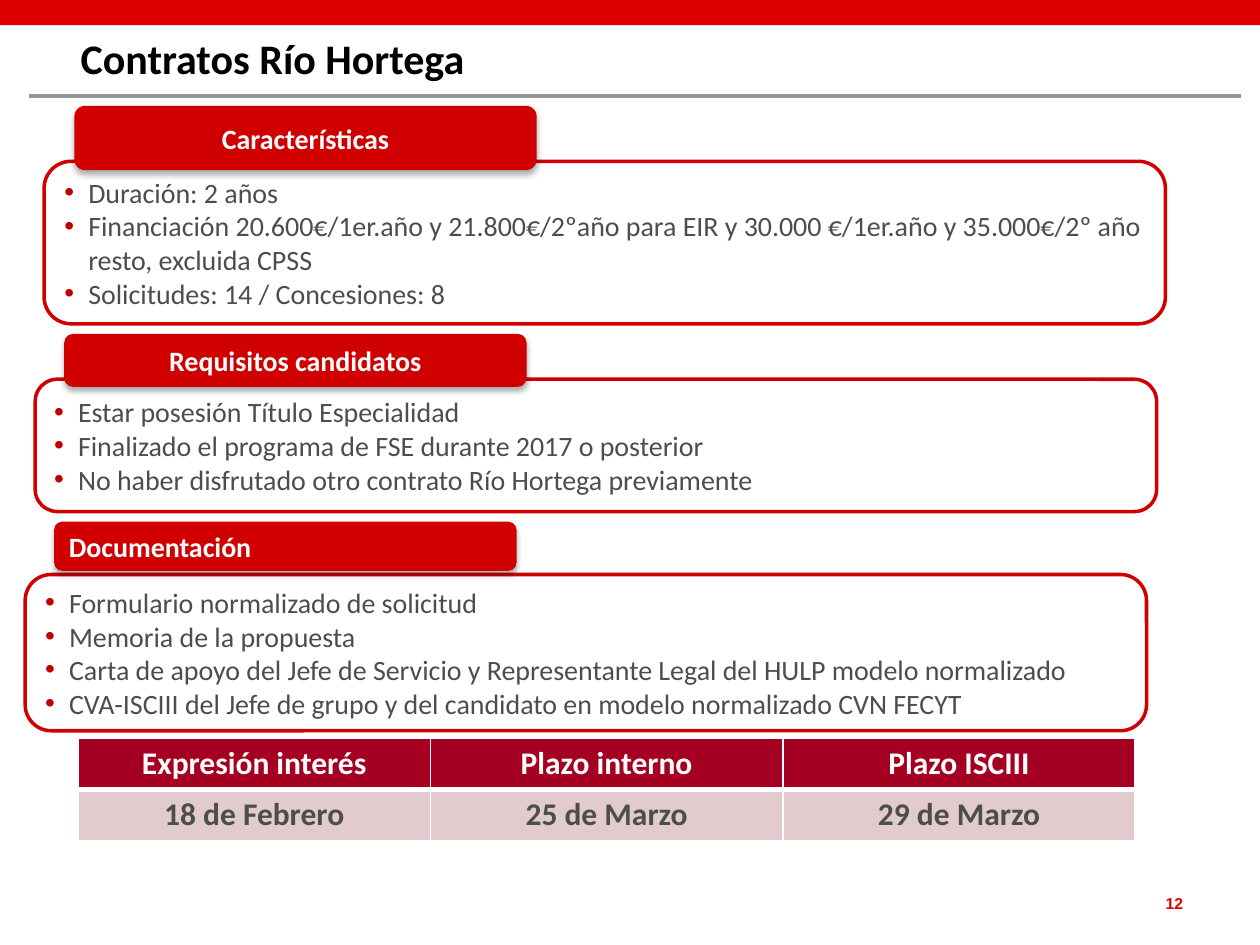
from dataclasses import dataclass

from lxml import etree
from pptx import Presentation
from pptx.dml.color import RGBColor
from pptx.enum.shapes import MSO_CONNECTOR, MSO_SHAPE
from pptx.enum.text import MSO_ANCHOR, PP_ALIGN
from pptx.oxml.ns import qn
from pptx.util import Inches, Pt

LEFT, CENTER, RIGHT = PP_ALIGN.LEFT, PP_ALIGN.CENTER, PP_ALIGN.RIGHT
MIDDLE = MSO_ANCHOR.MIDDLE
RECTANGLE, ROUNDED = MSO_SHAPE.RECTANGLE, MSO_SHAPE.ROUNDED_RECTANGLE
STRAIGHT = MSO_CONNECTOR.STRAIGHT


@dataclass(frozen=True)
class Theme:
    font: str = "Calibri"
    number_font: str = "Arial"
    banner: str = "DF0000"
    accent: str = "D00000"
    bullet: str = "C00000"
    rule: str = "969696"
    title: str = "010000"
    body: str = "4D4D4D"
    white: str = "FFFFFF"
    table_head: str = "A50021"
    table_body: str = "E1CBCC"
    shadow: str = "000000"
    title_size: int = 24
    body_size: int = 16
    table_size: int = 18
    number_size: int = 9


THEME = Theme()


@dataclass(frozen=True)
class Area:
    left: float
    top: float
    width: float
    height: float

    def lengths(self) -> tuple:
        return tuple(map(Inches, (self.left, self.top, self.width, self.height)))


@dataclass(frozen=True)
class Section:
    heading: str
    heading_area: Area
    body_area: Area
    items: tuple
    align: PP_ALIGN = CENTER


HEADING_WIDTH, BODY_WIDTH = 3.67, 8.9
SECTIONS = (
    Section("Requisitos candidatos",
            Area(0.51, 2.65, HEADING_WIDTH, 0.42), Area(0.28, 3.01, BODY_WIDTH, 1.05),
            ("Estar posesión Título Especialidad",
             "Finalizado el programa de FSE durante 2017 o posterior",
             "No haber disfrutado otro contrato Río Hortega previamente")),
    Section("Documentación",
            Area(0.43, 4.14, HEADING_WIDTH, 0.39), Area(0.2, 4.56, BODY_WIDTH, 1.24),
            ("Formulario normalizado de solicitud",
             "Memoria de la propuesta",
             "Carta de apoyo del Jefe de Servicio y Representante Legal del HULP modelo normalizado",
             "CVA-ISCIII del Jefe de grupo y del candidato en modelo normalizado CVN FECYT"),
            LEFT),
    Section("Características",
            Area(0.59, 0.84, HEADING_WIDTH, 0.51), Area(0.35, 1.28, BODY_WIDTH, 1.29),
            ("Duración: 2 años",
             "Financiación 20.600€/1er.año y 21.800€/2ºaño para EIR y 30.000 €/1er.año "
             "y 35.000€/2º año resto, excluida CPSS",
             "Solicitudes: 14 / Concesiones: 8")),
)
DEADLINES = (
    ("Expresión interés", "Plazo interno", "Plazo ISCIII"),
    ("18 de Febrero", "25 de Marzo", "29 de Marzo"),
)


def add_xml(parent, tag: str, **attributes):
    return etree.SubElement(parent, qn(tag), {k: str(v) for k, v in attributes.items()})


def style(para, size: int, color: str, bold: bool = False,
          align: PP_ALIGN = LEFT, font: str = THEME.font) -> None:
    para.alignment = align
    para.font.name, para.font.size, para.font.bold = font, Pt(size), bold
    para.font.color.rgb = RGBColor.from_string(color)


def add_bullet(para) -> None:
    indent = Inches(0.19)
    properties = para._p.get_or_add_pPr()
    properties.set("marL", str(indent))
    properties.set("indent", str(-indent))
    add_xml(add_xml(properties, "a:buClr"), "a:srgbClr", val=THEME.bullet)
    add_xml(properties, "a:buFont", typeface="Arial")
    add_xml(properties, "a:buChar", char="•")


def add_box(page, kind, area: Area, fill: str = "", line: str = ""):
    box = page.shapes.add_shape(kind, *area.lengths())
    box.shadow.inherit = False
    if fill:
        box.fill.solid()
        box.fill.fore_color.rgb = RGBColor.from_string(fill)
    else:
        box.fill.background()
    if line:
        box.line.color.rgb = RGBColor.from_string(line)
        box.line.width = Pt(2)
    else:
        box.line.fill.background()
    box.text_frame.word_wrap = True
    box.text_frame.vertical_anchor = MIDDLE
    return box


def add_text(page, area: Area, text: str, inset: float, **look) -> None:
    frame = page.shapes.add_textbox(*area.lengths()).text_frame
    frame.word_wrap = True
    frame.margin_left = frame.margin_right = Inches(inset)
    frame.margin_top = frame.margin_bottom = Inches(inset)
    para = frame.paragraphs[0]
    para.text = text
    style(para, **look)


def add_drop_shadow(box) -> None:
    effects = box._element.spPr.find(qn("a:effectLst"))
    shadow = add_xml(effects, "a:outerShdw", blurRad=Pt(3.5), dist=Pt(2.2),
                     dir=90 * 60000, rotWithShape=0)
    color = add_xml(shadow, "a:srgbClr", val=THEME.shadow)
    add_xml(color, "a:alpha", val=32000)


def add_section(page, section: Section) -> None:
    frame = add_box(page, ROUNDED, section.body_area, line=THEME.accent).text_frame
    for index, item in enumerate(section.items):
        para = frame.add_paragraph() if index else frame.paragraphs[0]
        para.text = item
        add_bullet(para)
        style(para, THEME.body_size, THEME.body)
    heading = add_box(page, ROUNDED, section.heading_area, fill=THEME.accent)
    add_drop_shadow(heading)
    para = heading.text_frame.paragraphs[0]
    para.text = section.heading
    style(para, THEME.body_size, THEME.white, True, section.align)


def set_borders(cell, top: float, bottom: float) -> None:
    properties = cell._tc.get_or_add_tcPr()
    edges = (("a:lnL", 1), ("a:lnR", 1), ("a:lnT", top), ("a:lnB", bottom))
    for position, (tag, width) in enumerate(edges):
        edge = add_xml(properties, tag, w=Pt(width))
        add_xml(add_xml(edge, "a:solidFill"), "a:srgbClr", val=THEME.white)
        properties.insert(position, edge)


def add_deadlines(page, area: Area) -> None:
    table = page.shapes.add_table(len(DEADLINES), len(DEADLINES[0]), *area.lengths()).table
    table.horz_banding = False
    looks = ((THEME.table_head, THEME.white, 1, 3), (THEME.table_body, THEME.body, 3, 1))
    for row, (texts, (fill, color, top, bottom)) in enumerate(zip(DEADLINES, looks)):
        for column, text in enumerate(texts):
            cell = table.cell(row, column)
            cell.text = text
            cell.fill.solid()
            cell.fill.fore_color.rgb = RGBColor.from_string(fill)
            set_borders(cell, top, bottom)
            style(cell.text_frame.paragraphs[0], THEME.table_size, color, True, CENTER)


def main() -> None:
    deck = Presentation()
    deck.slide_width, deck.slide_height = Inches(10), Inches(7.5)
    page = deck.slides.add_slide(deck.slide_layouts[6])

    # Page number, top band and title rule
    add_text(page, Area(8.45, 7.09, 0.94, 0.15), "12", 0, size=THEME.number_size,
             color=THEME.banner, bold=True, align=RIGHT, font=THEME.number_font)
    add_box(page, RECTANGLE, Area(0, 0, 10, 0.2), fill=THEME.banner)
    rule = page.shapes.add_connector(STRAIGHT, Inches(0.23), Inches(0.76),
                                     Inches(9.85), Inches(0.76))
    rule.line.color.rgb = RGBColor.from_string(THEME.rule)
    rule.line.width = Pt(2.25)
    add_xml(rule._element.spPr, "a:effectLst")

    # Title
    add_text(page, Area(0.59, 0.21, 9.07, 0.9), "Contratos Río Hortega", 0.05,
             size=THEME.title_size, color=THEME.title, bold=True)

    # Sections and deadlines
    for section in SECTIONS:
        add_section(page, section)
    add_deadlines(page, Area(0.62, 5.86, 8.39, 0.81))

    deck.save("out.pptx")


if __name__ == "__main__":
    main()
